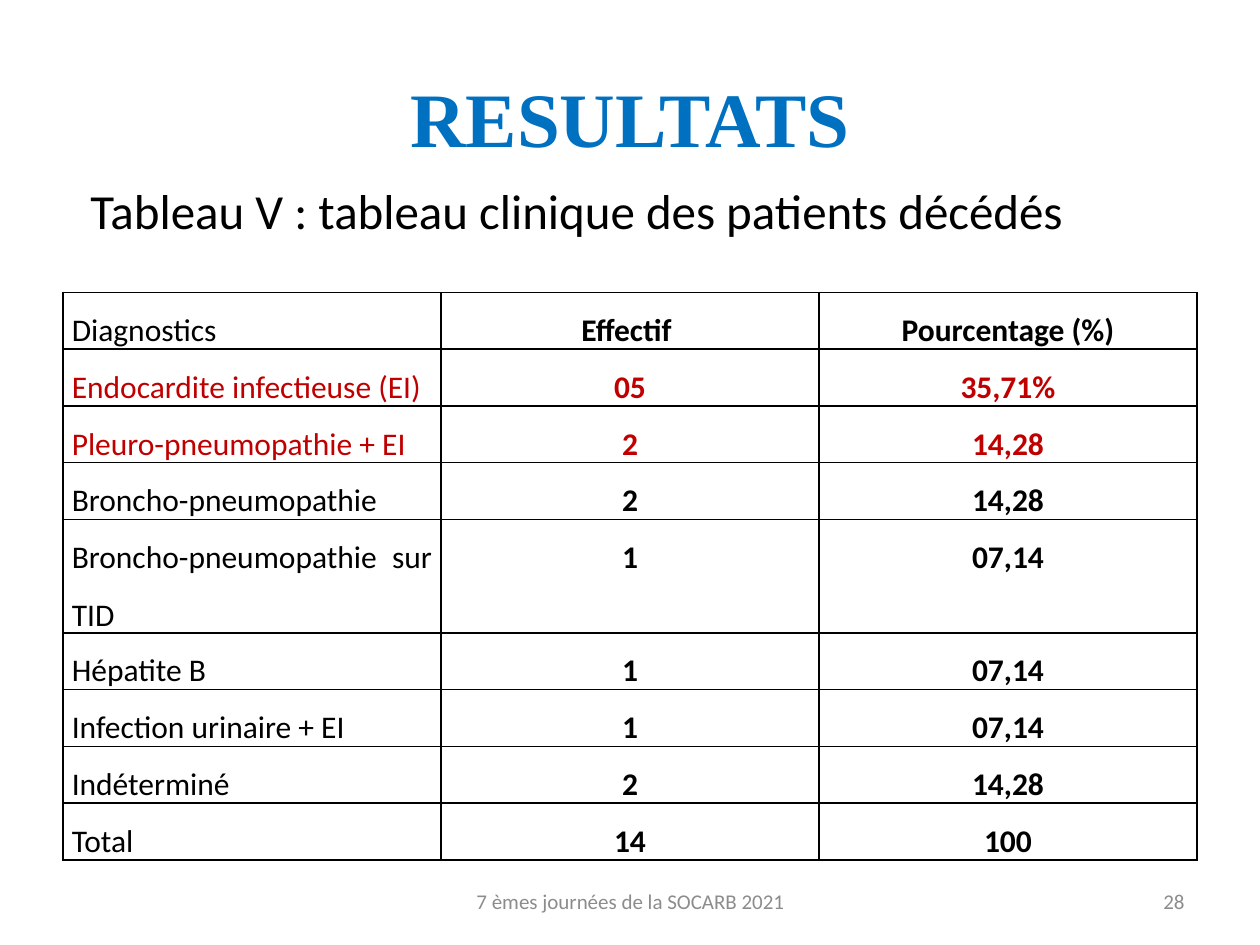
from lxml.etree import SubElement
from pptx import Presentation
from pptx.dml.color import RGBColor
from pptx.enum.text import MSO_ANCHOR, PP_ALIGN
from pptx.oxml.ns import qn
from pptx.util import Inches, Pt

COLORS = {"title": "0070C0", "text": "000000", "alert": "C00000", "foot": "8C8C8C"}
MARGIN = 0.5
WIDTH = 9
COLS = 3
ROW = 0.45
ALERTS = (1, 2)
ROWS = [
    ("Diagnostics ", "Effectif ", "Pourcentage (%)"),
    ("Endocardite infectieuse (EI)", "05", "35,71%"),
    ("Pleuro-pneumopathie + EI", "2", "14,28"),
    ("Broncho-pneumopathie ", "2", "14,28"),
    ("Broncho-pneumopathie sur TID", "1", "07,14"),
    ("Hépatite B", "1", "07,14"),
    ("Infection urinaire + EI", "1", "07,14"),
    ("Indéterminé", "2", "14,28"),
    ("Total ", "14", "100"),
]


def style(para, size, color, align, bold=False, face="Calibri"):
    para.alignment = align
    font = para.font
    font.name, font.size, font.bold = face, Pt(size), bold
    font.color.rgb = RGBColor.from_string(COLORS[color])


def add_title(slide, text):
    title = slide.shapes.title
    title.left, title.top = Inches(MARGIN), Inches(0.3)
    title.width, title.height = Inches(WIDTH), Inches(1.25)
    title.text_frame.text = text
    title.text_frame.vertical_anchor = MSO_ANCHOR.MIDDLE
    style(title.text_frame.paragraphs[0], 44, "title", PP_ALIGN.CENTER,
          True, "Times New Roman")


def add_text(slide, text, box, size, color, align, anchor=MSO_ANCHOR.MIDDLE):
    frame = slide.shapes.add_textbox(*map(Inches, box)).text_frame
    frame.word_wrap = True
    frame.vertical_anchor = anchor
    frame.text = text
    style(frame.paragraphs[0], size, color, align)


def add_borders(cell):
    props = cell._tc.get_or_add_tcPr()
    for side in ("lnL", "lnR", "lnT", "lnB"):
        line = SubElement(props, qn(f"a:{side}"), w=str(Pt(1)))
        fill = SubElement(line, qn("a:solidFill"))
        SubElement(fill, qn("a:srgbClr"), val=COLORS["text"])


def fill_cell(cell, text, first, color):
    cell.margin_left = cell.margin_right = Inches(0.07)
    cell.margin_top = cell.margin_bottom = 0
    add_borders(cell)
    cell.fill.background()
    cell.text = text
    para = cell.text_frame.paragraphs[0]
    para.line_spacing = 1.5
    para.space_after = Pt(8)
    align = PP_ALIGN.JUSTIFY if first else PP_ALIGN.CENTER
    style(para, 18, color, align, not first)


def add_grid(slide):
    frame = slide.shapes.add_table(
        len(ROWS), COLS, Inches(MARGIN), Inches(2.32),
        Inches(WIDTH), Inches(ROW * len(ROWS)))
    table = frame.table
    table.first_row = table.horz_banding = False
    for r, row in enumerate(ROWS):
        color = "alert" if r in ALERTS else "text"
        for c, text in enumerate(row):
            fill_cell(table.cell(r, c), text, c == 0, color)


def main():
    deck = Presentation()
    deck.slide_width, deck.slide_height = Inches(10), Inches(7.5)
    slide = deck.slides.add_slide(deck.slide_layouts[5])
    add_title(slide, "RESULTATS")
    add_text(slide, "7 èmes journées de la SOCARB 2021", (3.42, 6.95, 3.17, 0.4),
             12, "foot", PP_ALIGN.CENTER)
    add_grid(slide)
    add_text(slide, "28", (7.17, 6.95, 2.33, 0.4), 12, "foot", PP_ALIGN.RIGHT)
    add_text(slide, "Tableau V : tableau clinique des patients décédés",
             (0.62, 1.38, 8.47, 0.57), 28, "text", PP_ALIGN.LEFT, MSO_ANCHOR.TOP)
    deck.save("out.pptx")


if __name__ == "__main__":
    main()
